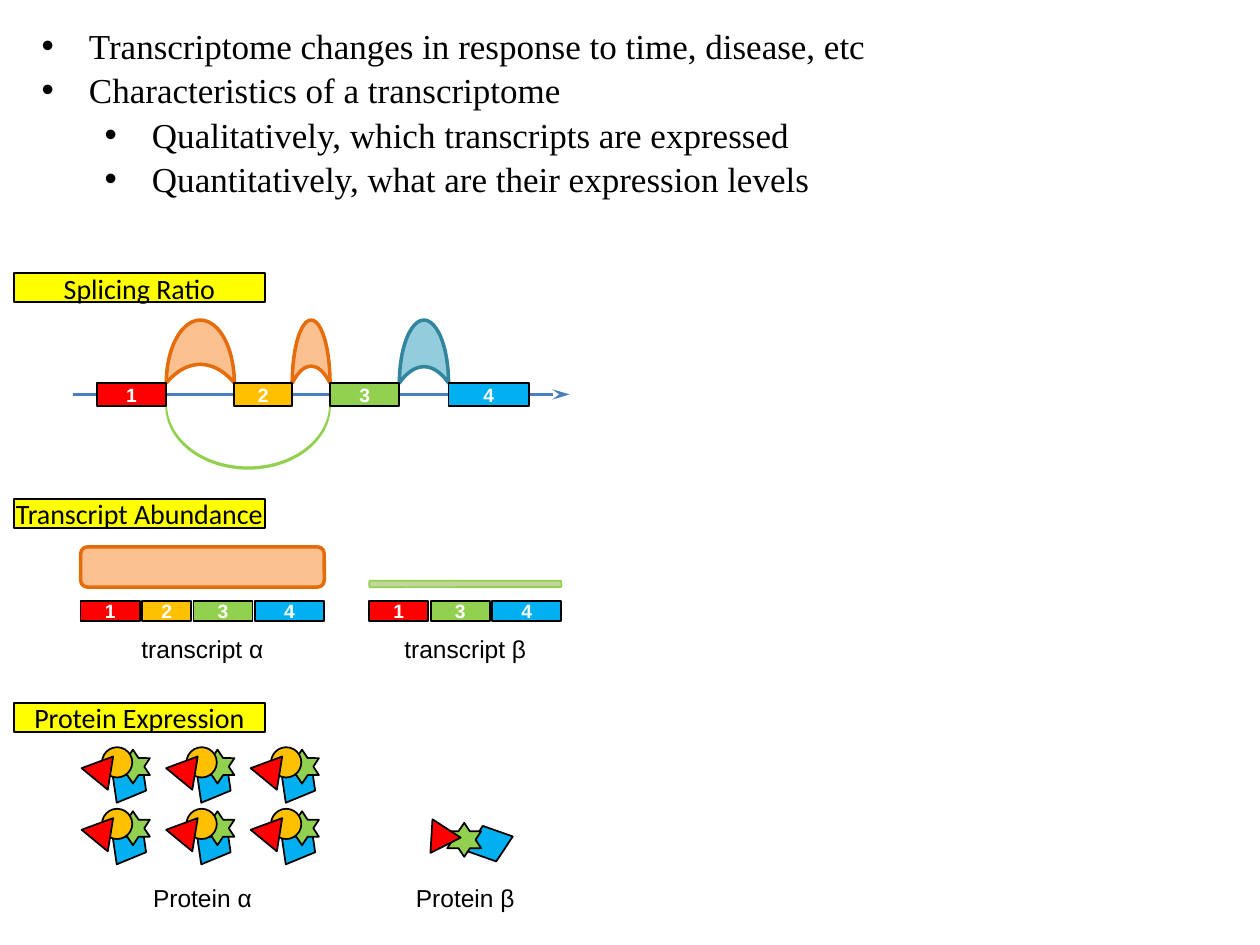
from dataclasses import dataclass

from lxml import etree
from pptx import Presentation
from pptx.dml.color import RGBColor
from pptx.enum.shapes import MSO_CONNECTOR, MSO_SHAPE
from pptx.enum.text import MSO_ANCHOR, MSO_AUTO_SIZE, PP_ALIGN
from pptx.oxml.ns import qn
from pptx.util import Pt

RECT = MSO_SHAPE.RECTANGLE
ROUNDED = MSO_SHAPE.ROUNDED_RECTANGLE
MOON = MSO_SHAPE.MOON
OVAL = MSO_SHAPE.OVAL
STAR = MSO_SHAPE.STAR_6_POINT
TRIANGLE = MSO_SHAPE.ISOSCELES_TRIANGLE
PARALLELOGRAM = MSO_SHAPE.PARALLELOGRAM
STRAIGHT = MSO_CONNECTOR.STRAIGHT
MIDDLE = MSO_ANCHOR.MIDDLE
TOP = MSO_ANCHOR.TOP
NO_FIT = MSO_AUTO_SIZE.NONE
CENTER = PP_ALIGN.CENTER
LEFT = PP_ALIGN.LEFT


@dataclass(frozen=True)
class Theme:
    black: str = "000000"
    white: str = "FFFFFF"
    heading: str = "FFFF00"
    red: str = "FF0000"
    gold: str = "FFC000"
    green: str = "92D050"
    blue: str = "00B0F0"
    peach: str = "FAC090"
    orange: str = "E46C0A"
    aqua: str = "93CDDD"
    teal: str = "31859C"
    olive: str = "C3D69B"
    gene: str = "4B7EBC"
    body_font: str = "Times New Roman"
    heading_font: str = "Calibri"
    label_font: str = "Arial"
    body_size: int = 20
    heading_size: int = 16
    label_size: int = 14
    exon_size: int = 11


THEME = Theme()
EXON_COLORS = {"1": THEME.red, "2": THEME.gold, "3": THEME.green, "4": THEME.blue}
EXON_WIDTHS = {"1": 33.8, "2": 28.1, "3": 33.8, "4": 39.6}
EXON_GAP = 1.3

ALPHA_PROTEIN = [
    (PARALLELOGRAM, 13, 11.5, 22.3, 16.6, THEME.blue, -22.4),
    (STAR, 16.6, 1.4, 19.4, 19.4, THEME.green, 0),
    (OVAL, 8.6, 0, 17.3, 17.3, THEME.gold, 0),
    (TRIANGLE, 0, 3.4, 19.4, 16.6, THEME.red, 39.5),
]
BETA_PROTEIN = [
    (PARALLELOGRAM, 27.4, 6.5, 22.3, 16.6, THEME.blue, 19.4),
    (STAR, 14.4, 2.9, 19.4, 19.4, THEME.green, 0),
    (TRIANGLE, 0, 0, 19.4, 16.6, THEME.red, -26.8),
]


def rgb(code):
    return RGBColor.from_string(code)


def write_centered(shape, words, font, size, color, bold=False):
    frame = shape.text_frame
    frame.margin_left = frame.margin_right = frame.margin_top = frame.margin_bottom = 0
    frame.word_wrap = False
    frame.vertical_anchor = MIDDLE
    frame.text = words
    paragraph = frame.paragraphs[0]
    paragraph.alignment = CENTER
    style = paragraph.runs[0].font
    style.name, style.size, style.bold = font, Pt(size), bold
    style.color.rgb = rgb(color)


def draw(shapes, kind, left, top, width, height, fill, line=THEME.black, weight=1, turn=0):
    shape = shapes.add_shape(kind, Pt(left), Pt(top), Pt(width), Pt(height))
    shape.shadow.inherit = False
    shape.fill.solid()
    shape.fill.fore_color.rgb = rgb(fill)
    shape.line.color.rgb = rgb(line)
    shape.line.width = Pt(weight)
    shape.rotation = turn
    return shape


def add_exon(shapes, number, left, top, width, height):
    exon = draw(shapes, RECT, left, top, width, height, EXON_COLORS[number])
    write_centered(exon, number, THEME.label_font, THEME.exon_size, THEME.white, True)


def add_caption(shapes, words, middle, top, width=92, height=23.8):
    caption = shapes.add_textbox(Pt(middle - width / 2), Pt(top), Pt(width), Pt(height))
    write_centered(caption, words, THEME.label_font, THEME.label_size, THEME.black)


def add_heading(shapes, words, left, top, width=143.3, height=16.6):
    heading = draw(shapes, RECT, left, top, width, height, THEME.heading)
    write_centered(heading, words, THEME.heading_font, THEME.heading_size, THEME.black)


def add_summary(body, points, left, top, width, height):
    body.left, body.top, body.width, body.height = Pt(left), Pt(top), Pt(width), Pt(height)
    frame = body.text_frame
    frame.auto_size = NO_FIT
    frame.word_wrap = True
    frame.vertical_anchor = TOP
    frame.text = "\n".join(words for words, _ in points)
    for paragraph, (_, level) in zip(frame.paragraphs, points):
        paragraph.level = level
        paragraph.alignment = LEFT
        paragraph.space_before = paragraph.space_after = Pt(0)
        paragraph.line_spacing = 1.05
        properties = paragraph._p.get_or_add_pPr()
        properties.set("marL", str(Pt(27 + 36 * level)))
        properties.set("indent", str(Pt(-27)))
        etree.SubElement(properties, qn("a:buFont")).set("typeface", THEME.label_font)
        etree.SubElement(properties, qn("a:buChar")).set("char", "•")
        style = paragraph.runs[0].font
        style.name, style.size = THEME.body_font, Pt(THEME.body_size)
        style.color.rgb = rgb(THEME.black)


def add_junction(shapes, start, end, top, fill, line, weight, thickness, turn, depth=36):
    span = end - start
    arc = draw(shapes, MOON, (start + end - depth) / 2, top + (depth - span) / 2,
               depth, span, fill, line, weight, turn)
    arc.adjustments[0] = thickness


def add_gene(shapes, left, top, width, height):
    exons = {"1": (13.6, 39.6), "2": (92.1, 33.1), "3": (146.8, 39.6), "4": (214.5, 46.1)}
    starts = {number: left + offset for number, (offset, _) in exons.items()}
    ends = {number: starts[number] + size for number, (_, size) in exons.items()}
    junctions = [
        ("1", "2", THEME.peach, THEME.orange, 0.704),
        ("2", "3", THEME.peach, THEME.orange, 0.731),
        ("3", "4", THEME.aqua, THEME.teal, 0.741),
    ]
    for donor, acceptor, fill, line, thickness in junctions:
        add_junction(shapes, ends[donor], starts[acceptor], top - 36, fill, line, 2, thickness, 90)
    add_junction(shapes, ends["1"], starts["3"], top + height,
                 THEME.olive, THEME.green, 1, 0.025, 270)

    middle = Pt(top + height / 2)
    strand = shapes.add_connector(STRAIGHT, Pt(left), middle, Pt(left + width), middle)
    strand.line.color.rgb = rgb(THEME.gene)
    strand.line.width = Pt(1.25)
    properties = strand.element.spPr
    arrow = etree.SubElement(properties.find(qn("a:ln")), qn("a:tailEnd"))
    arrow.set("type", "stealth")
    arrow.set("w", "med")
    arrow.set("len", "lg")
    etree.SubElement(properties, qn("a:effectLst"))

    for number, (_, size) in exons.items():
        add_exon(shapes, number, starts[number], top, size, height)


def add_transcript(shapes, name, numbers, left, top, abundance, fill, line, weight):
    width = sum(EXON_WIDTHS[n] for n in numbers) + EXON_GAP * (len(numbers) - 1)
    draw(shapes, ROUNDED, left, top - 7.9 - abundance, width, abundance, fill, line, weight)
    exon_left = left
    for number in numbers:
        add_exon(shapes, number, exon_left, top, EXON_WIDTHS[number], 11.5)
        exon_left += EXON_WIDTHS[number] + EXON_GAP
    add_caption(shapes, f"transcript {name}", left + width / 2, top + 15.2)


def add_proteins(shapes, name, parts, left, top, rows, columns, middle, caption_top):
    for row in range(rows):
        for column in range(columns):
            for kind, x, y, width, height, fill, turn in parts:
                draw(shapes, kind, left + 48.3 * column + x, top + 35.2 * row + y,
                     width, height, fill, turn=turn)
    add_caption(shapes, f"Protein {name}", middle, caption_top)


def main():
    deck = Presentation()
    deck.slide_width, deck.slide_height = Pt(720), Pt(540)
    slide = deck.slides.add_slide(deck.slide_layouts[1])
    title = slide.shapes.title.element
    title.getparent().remove(title)
    add_summary(slide.placeholders[1], [
        ("Transcriptome changes in response to time, disease, etc", 0),
        ("Characteristics of a transcriptome", 0),
        ("Qualitatively, which transcripts are expressed", 1),
        ("Quantitatively, what are their expression levels", 1),
    ], 16.6, 9.4, 691.9, 104.4)

    headings = {"Splicing Ratio": 156.2, "Transcript Abundance": 285.1, "Protein Expression": 401.8}
    for words, top in headings.items():
        add_heading(slide.shapes, words, 8, top)

    add_gene(slide.shapes.add_group_shape().shapes, 41.8, 218.9, 283.7, 13)
    beta = slide.shapes.add_group_shape().shapes
    add_transcript(beta, "β", "134", 211, 343.4, 3.6, THEME.olive, THEME.green, 1)
    add_proteins(beta, "β", BETA_PROTEIN, 241.2, 467.3, 1, 1, 265.9, 501.1)
    alpha = slide.shapes.add_group_shape().shapes
    add_transcript(alpha, "α", "1234", 46.1, 343.4, 23, THEME.peach, THEME.orange, 2)
    add_proteins(alpha, "α", ALPHA_PROTEIN, 49.7, 427, 2, 3, 115.7, 501.1)
    deck.save("out.pptx")


if __name__ == "__main__":
    main()
